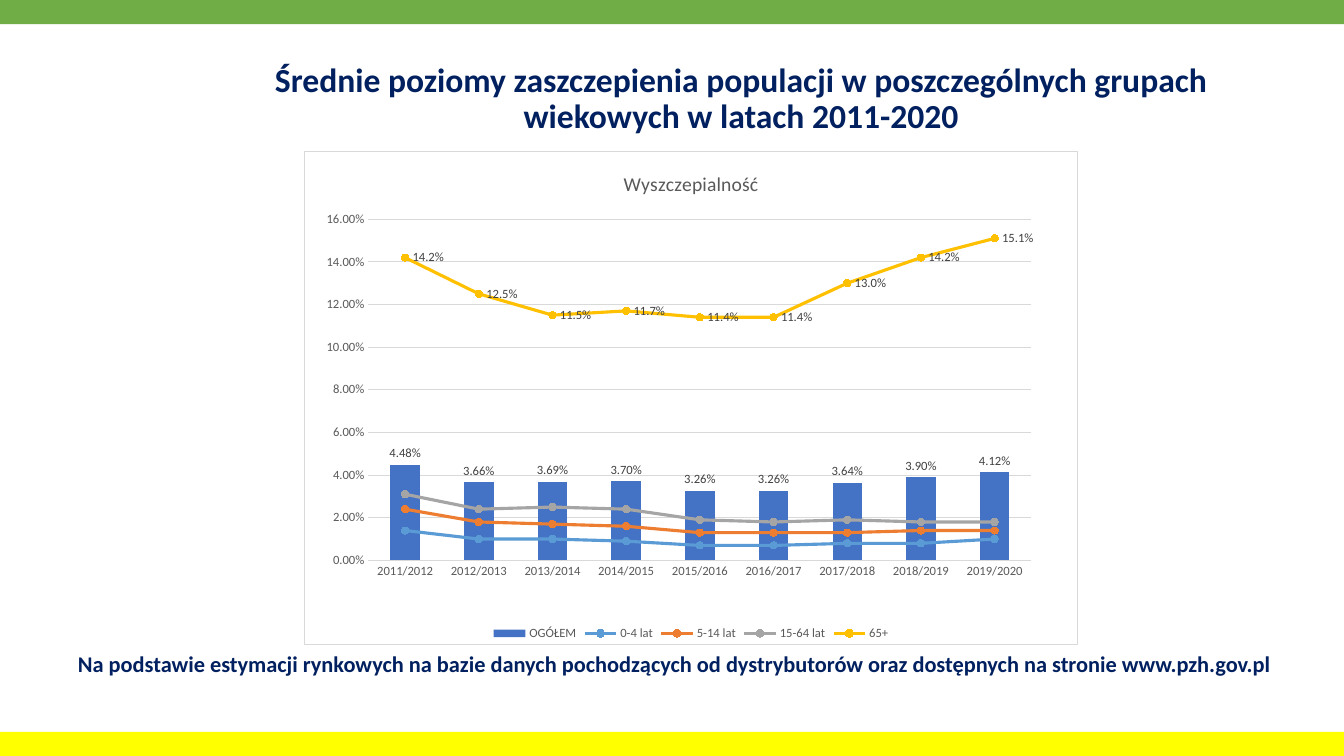
from lxml.etree import SubElement
from pptx import Presentation
from pptx.chart.data import CategoryChartData
from pptx.dml.color import RGBColor
from pptx.enum.chart import (XL_CHART_TYPE, XL_LABEL_POSITION, XL_LEGEND_POSITION,
                             XL_MARKER_STYLE, XL_TICK_MARK)
from pptx.enum.shapes import MSO_SHAPE
from pptx.enum.text import PP_ALIGN
from pptx.oxml import parse_xml
from pptx.oxml.ns import nsdecls, qn
from pptx.util import Cm, Pt

GREEN = RGBColor(0x70, 0xAD, 0x47)
YELLOW = RGBColor(0xFF, 0xFF, 0x00)
NAVY = RGBColor(0x00, 0x20, 0x60)
BLACK = RGBColor(0x00, 0x00, 0x00)
DARK = RGBColor(0x40, 0x40, 0x40)
GRAY = RGBColor(0x59, 0x59, 0x59)
PALE = RGBColor(0xD9, 0xD9, 0xD9)
BLUE = RGBColor(0x44, 0x72, 0xC4)
SKY = RGBColor(0x5B, 0x9B, 0xD5)
ORANGE = RGBColor(0xED, 0x7D, 0x31)
SILVER = RGBColor(0xA5, 0xA5, 0xA5)
GOLD = RGBColor(0xFF, 0xC0, 0x00)

YEARS = [f"{year}/{year + 1}" for year in range(2011, 2020)]
TOTAL = ("OGÓŁEM", BLUE, [4.48, 3.66, 3.69, 3.7, 3.26, 3.26, 3.64, 3.9, 4.12])
AGES = [
    ("0-4 lat", SKY, [1.4, 1, 1, 0.9, 0.7, 0.7, 0.8, 0.8, 1]),
    ("5-14 lat", ORANGE, [2.4, 1.8, 1.7, 1.6, 1.3, 1.3, 1.3, 1.4, 1.4]),
    ("15-64 lat", SILVER, [3.1, 2.4, 2.5, 2.4, 1.9, 1.8, 1.9, 1.8, 1.8]),
    ("65+", GOLD, [14.2, 12.5, 11.5, 11.7, 11.4, 11.4, 13, 14.2, 15.1]),
]
PLOT = {"x": 0.083, "y": 0.137, "w": 0.857, "h": 0.692}
FRAME = f"""<c:spPr {nsdecls('c', 'a')}>
  <a:solidFill><a:srgbClr val="FFFFFF"/></a:solidFill>
  <a:ln w="{int(Pt(0.75))}"><a:solidFill><a:srgbClr val="{PALE}"/></a:solidFill></a:ln>
</c:spPr>"""


class Deck:
    face = "Calibri"

    def __init__(self, prs):
        self.slide = prs.slides.add_slide(prs.slide_layouts[6])

    def style(self, font, size, color, bold=False):
        font.name, font.size, font.bold = self.face, Pt(size), bold
        font.color.rgb = color

    def band(self, top, color):
        bar = self.slide.shapes.add_shape(
            MSO_SHAPE.RECTANGLE, 0, Cm(top), Cm(33.87), Cm(0.61))
        bar.shadow.inherit = False
        bar.fill.solid()
        bar.fill.fore_color.rgb = color
        bar.line.fill.background()

    def text(self, words, box, size, space=1.0, inset=0.13):
        frame = self.slide.shapes.add_textbox(*map(Cm, box)).text_frame
        frame.word_wrap = True
        frame.margin_top = Cm(inset)
        frame.text = words
        para = frame.paragraphs[0]
        para.alignment = PP_ALIGN.CENTER
        para.line_spacing = space
        self.style(para.runs[0].font, size, NAVY, True)

    def labels(self, series, form, place):
        tags = series.data_labels
        tags.show_value = True
        tags.number_format, tags.number_format_is_linked = form, False
        tags.position = place
        self.style(tags.font, 9, DARK)

    def axis(self, axis):
        axis.major_tick_mark = axis.minor_tick_mark = XL_TICK_MARK.NONE
        self.style(axis.tick_labels.font, 9, GRAY)

    def edge(self, line, color, width):
        line.color.rgb = color
        line.width = Pt(width)

    def clear(self, parent, tag):
        for old in parent.findall(qn(tag)):
            parent.remove(old)

    def split(self, area):
        """Move every series but the first from the bars to a line plot."""
        bars = area.find(qn("c:barChart"))
        lines = parse_xml(f'<c:lineChart {nsdecls("c")}><c:grouping val="standard"/>'
                          '<c:varyColors val="0"/></c:lineChart>')
        for ser in bars.findall(qn("c:ser"))[1:]:
            self.clear(ser, "c:invertIfNegative")
            lines.append(ser)
        SubElement(lines, qn("c:marker")).set("val", "1")
        for axis in bars.findall(qn("c:axId")):
            SubElement(lines, qn("c:axId")).set("val", axis.get("val"))
        bars.addnext(lines)

    def place(self, area):
        """Fix the inner plot area within the chart."""
        self.clear(area, "c:layout")
        layout = parse_xml(f'<c:layout {nsdecls("c")}/>')
        manual = SubElement(layout, qn("c:manualLayout"))
        rules = {"layoutTarget": "inner", "xMode": "edge", "yMode": "edge", **PLOT}
        for key, val in rules.items():
            SubElement(manual, qn(f"c:{key}")).set("val", str(val))
        area.insert(0, layout)

    def chart(self, title, box):
        data = CategoryChartData(number_format="0.00%")
        data.categories = YEARS
        for name, _, vals in [TOTAL, *AGES]:
            data.add_series(name, [round(val / 100, 4) for val in vals])
        chart = self.slide.shapes.add_chart(
            XL_CHART_TYPE.COLUMN_CLUSTERED, *map(Cm, box), data).chart
        self.style(chart.font, 10, BLACK)
        chart.has_title = True
        frame = chart.chart_title.text_frame
        frame.text = title
        self.style(frame.paragraphs[0].runs[0].font, 14, GRAY)
        chart.has_legend = True
        chart.legend.position = XL_LEGEND_POSITION.BOTTOM
        chart.legend.include_in_layout = False
        self.style(chart.legend.font, 9, GRAY)

        self.axis(chart.category_axis)
        self.edge(chart.category_axis.format.line, PALE, 0.75)
        value = chart.value_axis
        self.axis(value)
        value.minimum_scale, value.maximum_scale, value.major_unit = 0, 0.16, 0.02
        value.tick_labels.number_format = "0.00%"
        value.tick_labels.number_format_is_linked = False
        value.format.line.fill.background()
        self.edge(value.major_gridlines.format.line, PALE, 0.75)

        root = chart.element
        area = root.xpath("c:chart/c:plotArea")[0]
        self.split(area)
        self.place(area)
        root.find(qn("c:chart")).addnext(parse_xml(FRAME))

        bars, lines = chart.plots
        bars.gap_width = 150
        bars.vary_by_categories = False
        total = bars.series[0]
        total.format.fill.solid()
        total.format.fill.fore_color.rgb = TOTAL[1]
        self.labels(total, "0.00%", XL_LABEL_POSITION.OUTSIDE_END)
        for series, (_, color, _) in zip(lines.series, AGES):
            series.smooth = False
            self.edge(series.format.line, color, 2.25)
            mark = series.marker
            mark.style, mark.size = XL_MARKER_STYLE.CIRCLE, 5
            mark.format.fill.solid()
            mark.format.fill.fore_color.rgb = color
            self.edge(mark.format.line, color, 0.75)
        self.labels(lines.series[len(AGES) - 1], "0.0%", XL_LABEL_POSITION.RIGHT)


def main():
    prs = Presentation()
    prs.slide_width, prs.slide_height = Cm(33.87), Cm(19.05)
    deck = Deck(prs)
    deck.band(0, GREEN)
    deck.band(18.44, YELLOW)
    deck.text("Średnie poziomy zaszczepienia populacji w poszczególnych grupach "
              "wiekowych w latach 2011-2020", (5.94, 1.42, 25.48, 3.15), 24, 0.9, 0.18)
    deck.text("Na podstawie estymacji rynkowych na bazie danych pochodzących od "
              "dystrybutorów oraz dostępnych na stronie www.pzh.gov.pl",
              (0.94, 16.26, 32.13, 0.94), 16)
    deck.chart("Wyszczepialność", (7.65, 3.81, 19.53, 12.45))
    prs.save("out.pptx")


if __name__ == "__main__":
    main()
